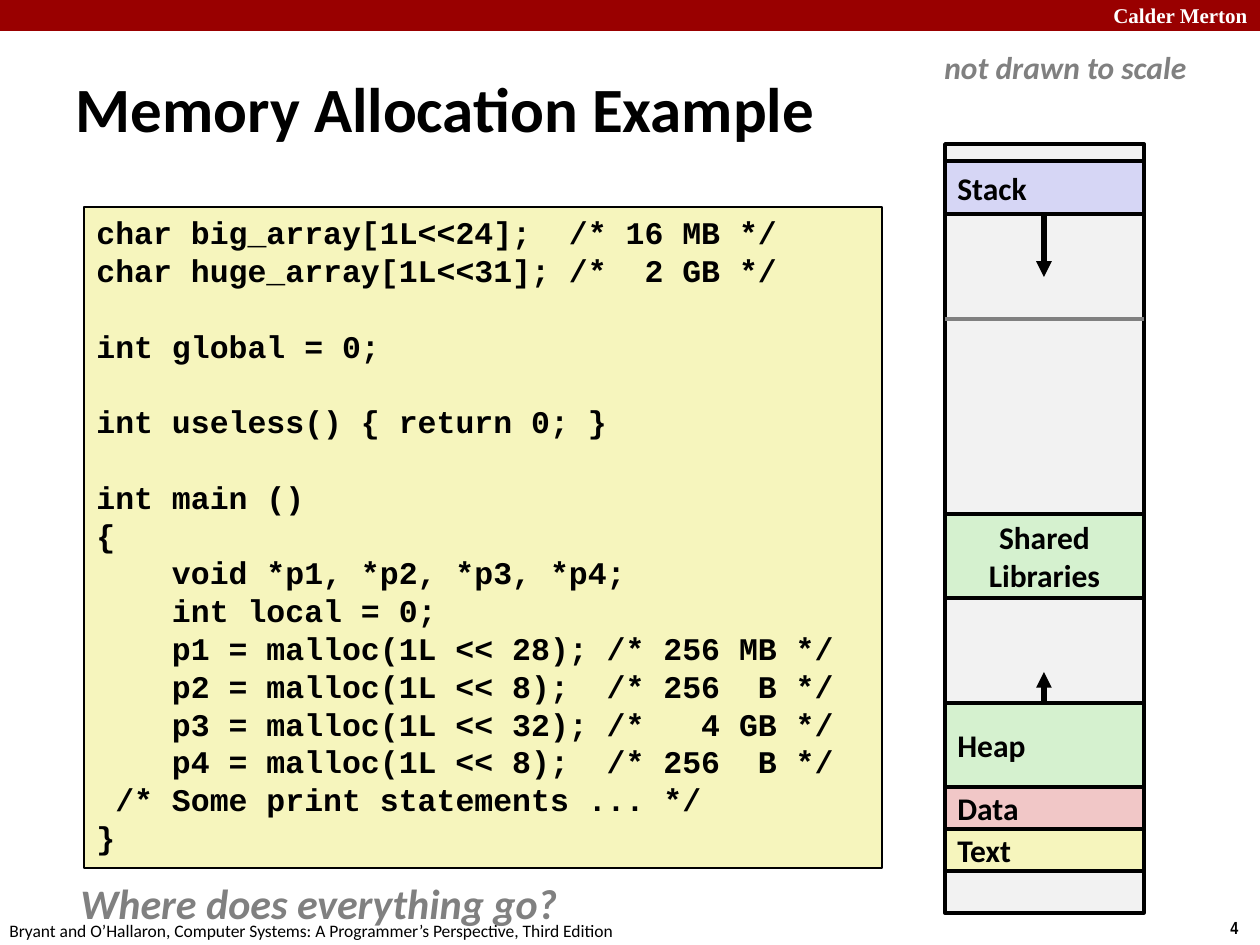
import pptx
import pptx.dml.color
import pptx.enum.shapes
import pptx.enum.text
import pptx.oxml.ns
import pptx.util
from lxml import etree

PX = pptx.util.Inches(1) / 126

RGB = pptx.dml.color.RGBColor
BLACK = RGB(0x00, 0x00, 0x00)
WHITE = RGB(0xFF, 0xFF, 0xFF)
GREY = RGB(0x80, 0x80, 0x80)
PALE_GREY = RGB(0xF2, 0xF2, 0xF2)
CRIMSON = RGB(0x99, 0x00, 0x00)
YELLOW = RGB(0xF6, 0xF5, 0xBD)
LAVENDER = RGB(0xD6, 0xD6, 0xF5)
PINK = RGB(0xF1, 0xC7, 0xC7)
GREEN = RGB(0xD5, 0xF1, 0xCF)

LEFT = pptx.enum.text.PP_ALIGN.LEFT
CENTER = pptx.enum.text.PP_ALIGN.CENTER
RIGHT = pptx.enum.text.PP_ALIGN.RIGHT
TOP = pptx.enum.text.MSO_ANCHOR.TOP
MIDDLE = pptx.enum.text.MSO_ANCHOR.MIDDLE

CODE_SIZE = 18
CODE_PITCH = 21.6
CODE_CHAR = 0.6 * CODE_SIZE
CODE = """\
char big_array[1L<<24];  /* 16 MB */
char huge_array[1L<<31]; /*  2 GB */

int global = 0;

int useless() { return 0; }

int main ()
{
    void *p1, *p2, *p3, *p4;
    int local = 0;
    p1 = malloc(1L << 28); /* 256 MB */
    p2 = malloc(1L << 8);  /* 256  B */
    p3 = malloc(1L << 32); /*   4 GB */
    p4 = malloc(1L << 8);  /* 256  B */
 /* Some print statements ... */
}"""

MEMORY_LEFT, MEMORY_WIDTH = 945, 199
MEMORY_MIDDLE = MEMORY_LEFT + MEMORY_WIDTH // 2
# top, height, fill, label lines, alignment
SEGMENTS = [
    (144, 769, PALE_GREY, [], LEFT),
    (161, 53, LAVENDER, ["Stack"], LEFT),
    (514, 84, GREEN, ["Shared", "Libraries"], CENTER),
    (703, 84, GREEN, ["Heap"], LEFT),
    (787, 42, PINK, ["Data"], LEFT),
    (829, 42, YELLOW, ["Text"], LEFT),
]


def px(*lengths):
    return [round(length * PX) for length in lengths]


def write_text(shape, lines, *, size=18, font="Calibri", color=BLACK, bold=True,
               italic=False, align=LEFT, anchor=TOP, wrap=True):
    frame = shape.text_frame
    frame.word_wrap = wrap
    frame.vertical_anchor = anchor
    frame.text = "\n".join(lines)
    for para in frame.paragraphs:
        para.alignment = align
        for span in para.runs:
            span.font.size = pptx.util.Pt(size)
            span.font.name = font
            span.font.color.rgb = color
            span.font.bold = bold
            span.font.italic = italic


def add_label(page, text, left, top, width, height, wrap=False, **text_format):
    box = page.shapes.add_textbox(*px(left, top, width, height))
    write_text(box, [text], wrap=wrap, **text_format)


def add_block(page, left, top, width, height, fill, line_width=0):
    block = page.shapes.add_shape(
        pptx.enum.shapes.MSO_SHAPE.RECTANGLE, *px(left, top, width, height))
    block.shadow.inherit = False
    block.fill.solid()
    block.fill.fore_color.rgb = fill
    if line_width:
        block.line.color.rgb = BLACK
        block.line.width = pptx.util.Pt(line_width)
    else:
        block.line.fill.background()
    return block


def add_line(page, x1, y1, x2, y2, color, width, arrow=False):
    line = page.shapes.add_connector(
        pptx.enum.shapes.MSO_CONNECTOR.STRAIGHT, *px(x1, y1, x2, y2))
    line.line.color.rgb = color
    line.line.width = pptx.util.Pt(width)
    qn = pptx.oxml.ns.qn
    properties = line.element.find(qn("p:spPr"))
    if arrow:
        etree.SubElement(properties.find(qn("a:ln")), qn("a:tailEnd"), type="triangle")
    etree.SubElement(properties, qn("a:effectLst"))


def add_title(page, text, left, top, width, height):
    title = page.shapes.title
    title.left, title.top, title.width, title.height = px(left, top, width, height)
    write_text(title, [text], size=36, anchor=MIDDLE)


def add_code(page, code, left, top, width, height):
    """Turn blank lines into space before, and leading blanks into indents."""
    block = add_block(page, left, top, width, height, YELLOW, 1)
    source = code.split("\n")
    write_text(block, [line.strip() for line in source if line],
               size=CODE_SIZE, font="Courier New")
    paragraphs = iter(block.text_frame.paragraphs)
    gap = 0
    for line in source:
        if not line:
            gap += CODE_PITCH
            continue
        para = next(paragraphs)
        para.line_spacing = pptx.util.Pt(CODE_PITCH)
        para.space_before = pptx.util.Pt(gap)
        indent = len(line) - len(line.lstrip())
        if indent:
            margin = pptx.util.Pt(indent * CODE_CHAR)
            para._p.get_or_add_pPr().set("marL", str(int(margin)))
        gap = 0


def add_memory_map(page):
    for top, height, fill, lines, align in SEGMENTS:
        block = add_block(page, MEMORY_LEFT, top, MEMORY_WIDTH, height, fill, 2)
        if lines:
            write_text(block, lines, align=align, anchor=MIDDLE)
    add_line(page, MEMORY_MIDDLE, 214, MEMORY_MIDDLE, 277, BLACK, 3, arrow=True)
    add_line(page, MEMORY_MIDDLE, 703, MEMORY_MIDDLE, 672, BLACK, 3, arrow=True)
    add_line(page, MEMORY_LEFT, 319, MEMORY_LEFT + MEMORY_WIDTH, 319, GREY, 2)


def main():
    deck = pptx.Presentation()
    deck.slide_width, deck.slide_height = px(1260, 945)
    page = deck.slides.add_slide(deck.slide_layouts.get_by_name("Title Only"))

    add_block(page, 0, 0, 1260, 31, CRIMSON)
    add_label(page, "Calder Merton", 1060, -4, 200, 38, wrap=True, align=RIGHT,
              size=12, font="Times New Roman", color=WHITE)
    add_label(page, "4", 1218, 911, 42, 34, size=10, font="Arial Narrow")
    add_label(page, "Bryant and O’Hallaron, Computer Systems: "
              "A Programmer’s Perspective, Third Edition",
              -3, 914, 640, 34, size=10, bold=False)

    add_title(page, "Memory Allocation Example", 63, 68, 944, 79)
    add_code(page, CODE, 84, 207, 798, 661)
    add_label(page, "not drawn to scale", 932, 42, 268, 50, color=GREY, italic=True)
    add_label(page, "Where does everything go?", 68, 871, 507, 64,
              size=24, color=GREY, italic=True)
    add_memory_map(page)
    deck.save("out.pptx")


if __name__ == "__main__":
    main()
